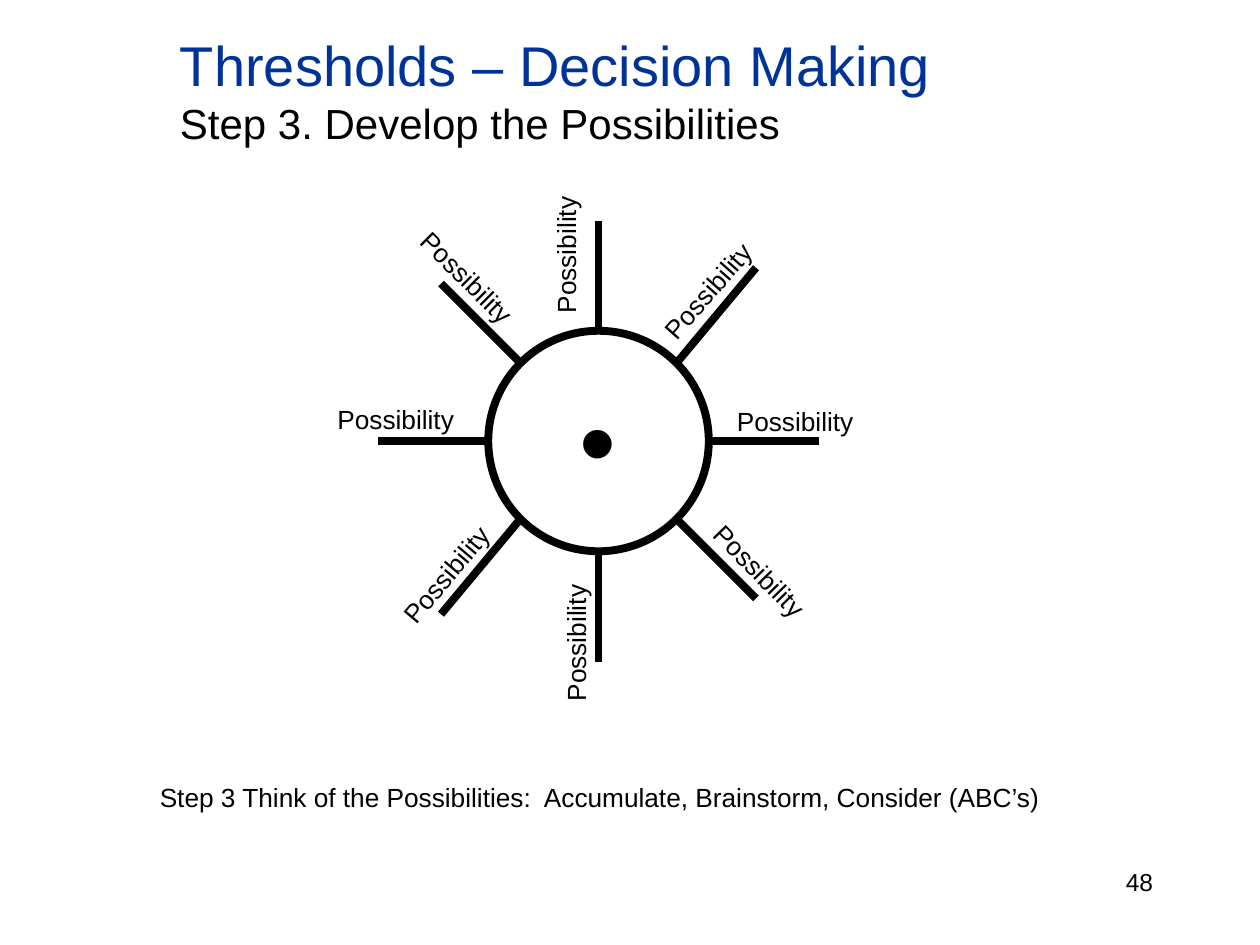
from pptx import Presentation
from pptx.dml.color import RGBColor
from pptx.enum.shapes import MSO_CONNECTOR, MSO_SHAPE
from pptx.enum.text import MSO_ANCHOR, PP_ALIGN
from pptx.oxml.ns import qn
from pptx.util import Inches, Pt
from lxml.etree import SubElement

BLACK = "000000"
BLUE = "003399"
WHITE = "FFFFFF"
LINE_WIDTH = 4.5
CENTER_X, CENTER_Y, RADIUS = 4.75, 3.5, 0.875

HEADING = [("Thresholds – Decision Making", 32, BLUE),
           ("Step 3. Develop the Possibilities", 24, BLACK)]
CAPTION = "Step 3 Think of the Possibilities:  Accumulate, Brainstorm, Consider (ABC’s)"
LABEL = "Possibility"
LABEL_SIZE = (1.5, 0.35)

# SPOKES
SPOKES = [
    ((0.875, 0), (1.75, 0)),
    ((-0.875, 0), (-1.75, 0)),
    ((0, -0.875), (0, -1.75)),
    ((0, 0.875), (0, 1.75)),
    ((0.625, -0.625), (1.25, -1.375)),
    ((-0.625, 0.625), (-1.25, 1.375)),
    ((-0.625, -0.625), (-1.25, -1.25)),
    ((0.625, 0.625), (1.25, 1.25)),
]
LABELS = [
    (5.75, 3.17, 0),
    (4.99, 1.99, 311.5),
    (3.74, 1.66, 270),
    (3.09, 2.16, 44.9),
    (2.58, 3.15, 0),
    (2.91, 4.24, 310.2),
    (3.82, 4.74, 270),
    (5.41, 4.49, 45.8),
]


def color(value):
    return RGBColor.from_string(value)


def add_text(page, place, lines, anchor=MSO_ANCHOR.TOP, align=PP_ALIGN.LEFT, rotation=0):
    box = page.shapes.add_textbox(*map(Inches, place))
    box.rotation = rotation
    frame = box.text_frame
    frame.word_wrap = True
    frame.vertical_anchor = anchor
    para = frame.paragraphs[0]
    para.alignment = align
    for index, (text, size, hue) in enumerate(lines):
        if index:
            para.add_line_break()
        span = para.add_run()
        span.text = text
        for name, value in {"name": "Arial", "size": Pt(size)}.items():
            setattr(span.font, name, value)
        span.font.color.rgb = color(hue)


def set_line(shape):
    shape.line.color.rgb = color(BLACK)
    shape.line.width = Pt(LINE_WIDTH)


def add_spoke(page, inner, outer):
    ends = [Inches(middle + offset) for point in (inner, outer)
            for middle, offset in zip((CENTER_X, CENTER_Y), point)]
    spoke = page.shapes.add_connector(MSO_CONNECTOR.STRAIGHT, *ends)
    set_line(spoke)
    SubElement(spoke._element.spPr, qn("a:effectLst"))


def add_wheel(page):
    wheel = page.shapes.add_shape(
        MSO_SHAPE.OVAL, Inches(CENTER_X - RADIUS), Inches(CENTER_Y - RADIUS),
        Inches(2 * RADIUS), Inches(2 * RADIUS))
    wheel.shadow.inherit = False
    wheel.fill.solid()
    wheel.fill.fore_color.rgb = color(WHITE)
    set_line(wheel)
    for inner, outer in SPOKES:
        add_spoke(page, inner, outer)


def main():
    deck = Presentation()
    deck.slide_width, deck.slide_height = Inches(10), Inches(7.5)
    page = deck.slides.add_slide(deck.slide_layouts[6])
    add_text(page, (1.33, 0.08, 6.75, 1.25), HEADING, anchor=MSO_ANCHOR.MIDDLE)
    add_wheel(page)
    add_text(page, (4.5, 2.92, 0.58, 1.1), [("•", 60, BLACK)])
    add_text(page, (1.17, 6.15, 7.83, 0.6), [(CAPTION, 15, BLACK)])
    for left, top, rotation in LABELS:
        add_text(page, (left, top, *LABEL_SIZE), [(LABEL, 15, BLACK)], rotation=rotation)
    add_text(page, (7.17, 6.83, 2.08, 0.5), [("48", 14, BLACK)], align=PP_ALIGN.RIGHT)
    deck.save("out.pptx")


if __name__ == "__main__":
    main()
